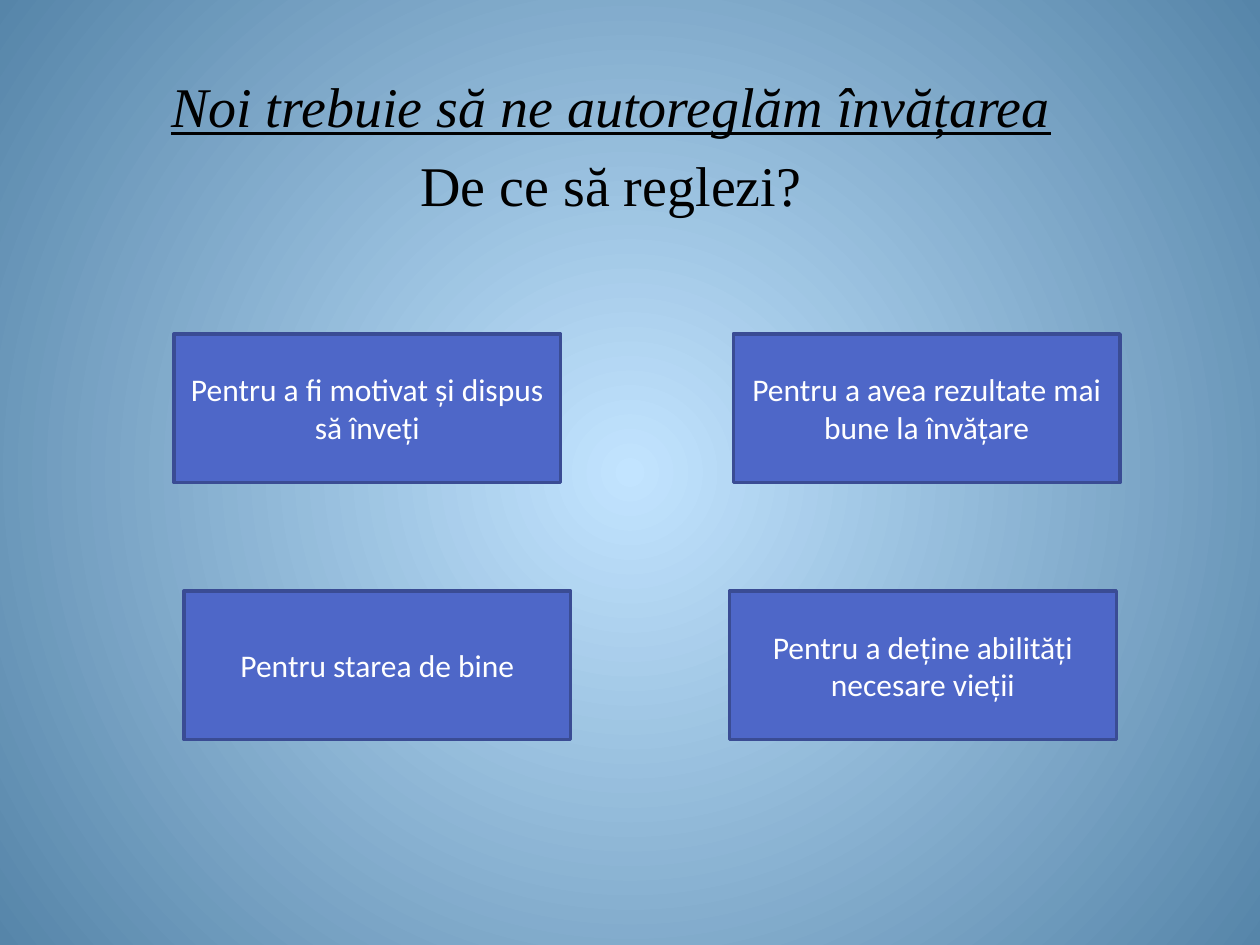
from lxml import etree
from pptx import Presentation
from pptx.dml.color import RGBColor
from pptx.enum.shapes import MSO_SHAPE
from pptx.enum.text import MSO_ANCHOR, PP_ALIGN
from pptx.oxml.ns import qn
from pptx.util import Inches, Pt

RECTANGLE = MSO_SHAPE.RECTANGLE
MIDDLE = MSO_ANCHOR.MIDDLE
CENTER = PP_ALIGN.CENTER


def color(hex_value):
    return RGBColor.from_string(hex_value)


def format_run(run, font_name, size, hex_value):
    run.font.name = font_name
    run.font.size = Pt(size)
    run.font.color.rgb = color(hex_value)


prs = Presentation()
prs.slide_width = Inches(10)
prs.slide_height = Inches(7.5)

# Content layout: the heading sits in the body, so the title goes
slide = prs.slides.add_slide(prs.slide_layouts[1])
empty_title = slide.shapes.title.element
empty_title.getparent().remove(empty_title)

# Radial background, light in the centre
background = slide.background.fill
background.gradient()
for stop, (position, hex_value) in zip(background.gradient_stops,
                                       [(0, "C2E4FF"), (1, "5685A9")]):
    stop.position = position
    stop.color.rgb = color(hex_value)
gradient = slide.element.find(".//" + qn("a:gradFill"))
linear = gradient.find(qn("a:lin"))
radial = etree.Element(qn("a:path"), {"path": "circle"})
etree.SubElement(radial, qn("a:fillToRect"),
                 dict.fromkeys("ltrb", "50000"))
gradient.replace(linear, radial)

# Heading and question
heading = slide.placeholders[1]
heading.left, heading.top = Inches(0.35), Inches(0.52)
heading.width, heading.height = Inches(9), Inches(6.18)
heading.text_frame.text = "Noi trebuie să ne autoreglăm învățarea\nDe ce să reglezi?"
for paragraph in heading.text_frame.paragraphs:
    paragraph.alignment = CENTER
    properties = paragraph._p.get_or_add_pPr()
    properties.set("marL", "0")
    properties.set("indent", "0")
    etree.SubElement(properties, qn("a:buNone"))
    format_run(paragraph.runs[0], "Times New Roman", 32, "000000")
statement = heading.text_frame.paragraphs[0].runs[0]
statement.font.italic = True
statement.font.underline = True

# Four reasons
reasons = [
    (1.38, 2.65, "Pentru a fi motivat și dispus să înveți"),
    (1.46, 4.69, "Pentru starea de bine"),
    (5.79, 4.69, "Pentru a deține abilități necesare vieții"),
    (5.82, 2.65, "Pentru a avea rezultate mai bune la învățare"),
]
for left, top, reason in reasons:
    box = slide.shapes.add_shape(RECTANGLE, Inches(left), Inches(top),
                                 Inches(3.07), Inches(1.18))
    box.shadow.inherit = False
    box.fill.solid()
    box.fill.fore_color.rgb = color("4E67C8")
    box.line.color.rgb = color("3A4C94")
    box.line.width = Pt(2)
    frame = box.text_frame
    frame.word_wrap = True
    frame.vertical_anchor = MIDDLE
    frame.text = reason
    frame.paragraphs[0].alignment = CENTER
    format_run(frame.paragraphs[0].runs[0], "Calibri", 18, "FFFFFF")

prs.save("out.pptx")
